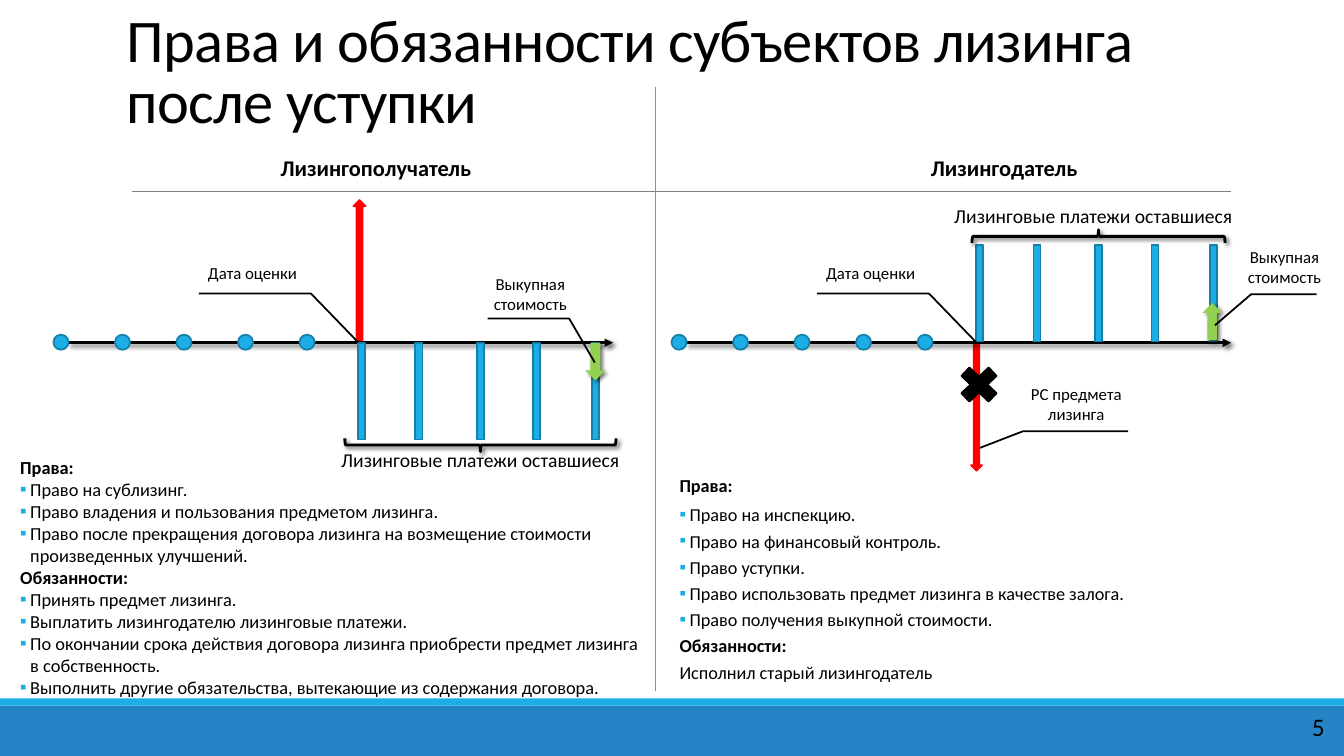
from dataclasses import dataclass
from lxml.etree import SubElement
from pptx import Presentation
from pptx.dml.color import RGBColor as RGB
from pptx.enum.shapes import MSO_CONNECTOR as Link, MSO_SHAPE as Kind
from pptx.enum.text import MSO_ANCHOR as Anchor, PP_ALIGN as Align
from pptx.oxml.ns import qn
from pptx.util import Inches, Pt


@dataclass(frozen=True)
class Theme:
    font: str = "Calibri"
    black: str = "000000"
    white: str = "FFFFFF"
    blue: str = "1CADE4"
    edge: str = "1580A9"
    foot: str = "2683C6"
    red: str = "FF0000"
    green: str = "92D050"
    grey: str = "808080"
    teal: str = "62A39F"
    title: float = 43.2
    page: float = 18
    head: float = 16
    label: float = 14
    duty: float = 13.1
    claim: float = 13
    note: float = 12
    thin: float = 1.25
    thick: float = 2


T = Theme()
AXIS = 3.4
SHIFT = 6.13
BARS = (3.55, 4.12, 4.73, 5.29, 5.87)
TENANT = (
    ("Права:", "head"),
    ("Право на сублизинг.", "item"),
    ("Право владения и пользования предметом лизинга.", "item"),
    ("Право после прекращения договора лизинга на возмещение стоимости произведенных улучшений.", "item"),
    ("Обязанности:", "head"),
    ("Принять предмет лизинга.", "item"),
    ("Выплатить лизингодателю лизинговые платежи.", "item"),
    ("По окончании срока действия договора лизинга приобрести предмет лизинга в собственность.", "item"),
    ("Выполнить другие обязательства, вытекающие из содержания договора.", "item"),
)
OWNER = (
    ("Права:", "head"),
    ("Право на инспекцию.", "item"),
    ("Право на финансовый контроль.", "item"),
    ("Право уступки.", "item"),
    ("Право использовать предмет лизинга в качестве залога.", "item"),
    ("Право получения выкупной стоимости.", "item"),
    ("Обязанности:", "head"),
    ("Исполнил старый лизингодатель", "plain"),
)


def style(para, size, bold=False):
    for run in para.runs:
        font = run.font
        font.name, font.size, font.bold = T.font, Pt(size), bold
        font.color.rgb = RGB.from_string(T.black)


def shade(props):
    effects = props.find(qn("a:effectLst"))
    glow = SubElement(effects, qn("a:outerShdw"), blurRad=str(Pt(3)),
                      dist=str(Pt(2)), dir="2700000", algn="tl", rotWithShape="0")
    color = SubElement(glow, qn("a:srgbClr"), val=T.black)
    SubElement(color, qn("a:alpha"), val="60000")


def shape(slide, kind, box, fill=None, line=None, width=T.thin, turn=0, shadow=False):
    item = slide.shapes.add_shape(kind, *map(Inches, box))
    item.shadow.inherit = False
    item.rotation = turn
    if fill:
        item.fill.solid()
        item.fill.fore_color.rgb = RGB.from_string(fill)
    else:
        item.fill.background()
    if line:
        item.line.color.rgb = RGB.from_string(line)
        item.line.width = Pt(width)
    else:
        item.line.fill.background()
    if shadow:
        shade(item._element.spPr)
    return item


def rule(slide, start, end, color, width, arrow=False):
    item = slide.shapes.add_connector(Link.STRAIGHT, *map(Inches, start + end))
    item.line.color.rgb = RGB.from_string(color)
    item.line.width = Pt(width)
    props = item._element.spPr
    SubElement(props, qn("a:effectLst"))
    if arrow:
        SubElement(props.find(qn("a:ln")), qn("a:tailEnd"), type="triangle")
        shade(props)


def text(slide, box, words, size, bold=False, align=Align.CENTER):
    frame = slide.shapes.add_textbox(*map(Inches, box)).text_frame
    frame.word_wrap = True
    frame.text = words
    para = frame.paragraphs[0]
    para.alignment = align
    style(para, size, bold)
    return frame


def bullet(para):
    props = para._p.get_or_add_pPr()
    props.set("marL", str(Inches(0.1)))
    props.set("indent", str(-Inches(0.1)))
    color = SubElement(props, qn("a:buClr"))
    SubElement(color, qn("a:srgbClr"), val=T.blue)
    SubElement(props, qn("a:buFont"), typeface=T.font)
    SubElement(props, qn("a:buChar"), char="▪")


def rights(slide, box, rows, size, pitch=None):
    frame = slide.shapes.add_textbox(*map(Inches, box)).text_frame
    frame.word_wrap = True
    frame.margin_left = frame.margin_right = 0
    frame.text = "\n".join(words for words, _ in rows)
    for para, (_, role) in zip(frame.paragraphs, rows):
        if pitch:
            para.line_spacing = pitch
        if role == "item":
            bullet(para)
        style(para, size, role == "head")
    return frame


def callout(slide, box, words, bends):
    item = shape(slide, Kind.LINE_CALLOUT_2_NO_BORDER, box, T.white, T.black)
    for i, bend in enumerate(bends):
        item.adjustments[i] = bend
    frame = item.text_frame
    frame.word_wrap = True
    frame.vertical_anchor = Anchor.MIDDLE
    frame.text = words
    para = frame.paragraphs[0]
    para.alignment = Align.CENTER
    style(para, T.note)


def flow(slide, left, top):
    rule(slide, (left + 0.68, AXIS), (left + 6.08, AXIS), T.black, T.thick, True)
    for i in range(5):
        shape(slide, Kind.OVAL, (left + 0.53 + i * 0.61, 3.32, 0.15, 0.15), T.blue, T.edge)
    for x in BARS:
        shape(slide, Kind.RECTANGLE, (left + x, top, 0.07, 0.96), T.blue, T.edge)
    callout(slide, (left + 1.7, 2.37, 1.61, 0.67), "Дата оценки",
            (0.81, 0.17, 0.81, 0.86, 1.53, 1.15))


def arrow(slide, box, color, turn, line=None, shadow=False):
    shape(slide, Kind.RIGHT_ARROW, box, color, line, turn=turn, shadow=shadow)


def brace(slide, box, turn, spot):
    shape(slide, Kind.RIGHT_BRACE, box, None, T.black, T.thick, turn, True)
    text(slide, spot + (3.25, 0.34), "Лизинговые платежи оставшиеся", T.label)


def frame(slide):
    shape(slide, Kind.RECTANGLE, (0, 7, 13.33, 0.5), T.foot)
    shape(slide, Kind.RECTANGLE, (0, 6.93, 13.33, 0.07), T.blue)
    rule(slide, (1.31, 1.9), (12.21, 1.9), T.grey, 0.5)
    title = text(slide, (1.16, 0.72, 11, 0.68),
                 "Права и обязанности субъектов лизинга после уступки", T.title, align=Align.LEFT)
    title.vertical_anchor = Anchor.BOTTOM
    title.paragraphs[0].line_spacing = 0.85
    title.paragraphs[0].runs[0]._r.get_or_add_rPr().set("spc", "-50")
    text(slide, (12.81, 7.01, 0.53, 0.4), "5", T.page)
    text(slide, (2.23, 1.48, 3, 0.37), "Лизингополучатель", T.head, True)
    text(slide, (8.46, 1.48, 3, 0.37), "Лизингодатель", T.head, True)


def tenant(slide):
    rights(slide, (0.2, 4.48, 6.19, 2.89), TENANT, T.duty)
    arrow(slide, (2.87, 2.62, 1.39, 0.12), T.red, 270, T.red)
    flow(slide, 0, AXIS)
    arrow(slide, (5.72, 3.49, 0.37, 0.2), T.green, 90, shadow=True)
    brace(slide, (4.7, 3.07, 0.13, 2.69), 90, (3.14, 4.39))
    callout(slide, (4.79, 2.67, 0.94, 0.49), "Выкупная стоимость", (1, 0.05, 1, 0.91, 1.89, 1.18))


def owner(slide):
    body = rights(slide, (6.74, 4.68, 6.27, 2.32), OWNER, T.claim, 1.2)
    first = body.paragraphs[0]
    first.line_spacing, first.space_before, first.space_after = 0.9, Pt(12), Pt(2)
    callout(slide, (9.87, 3.67, 1.61, 0.67), "РС предмета лизинга",
            (1.16, -0.1, 0.91, 0.17, 0.91, 0.82))
    arrow(slide, (9.05, 3.98, 1.27, 0.11), T.red, 90, T.red)
    flow(slide, SHIFT, 2.43)
    arrow(slide, (11.84, 3.09, 0.37, 0.2), T.green, 270, shadow=True)
    callout(slide, (12.24, 2.31, 1, 0.67), "Выкупная стоимость",
            (1.37, -0.19, 0.91, 0.17, 0.91, 0.82))
    brace(slide, (10.83, 1.09, 0.13, 2.51), 270, (9.22, 1.97))
    shape(slide, Kind.MATH_MULTIPLY, (9.45, 3.57, 0.52, 0.49), T.black, T.black)


def main():
    deck = Presentation()
    deck.slide_width, deck.slide_height = Inches(13.33), Inches(7.5)
    slide = deck.slides.add_slide(deck.slide_layouts[6])
    frame(slide)
    tenant(slide)
    owner(slide)
    rule(slide, (6.5, 0.86), (6.5, 6.86), T.teal, 1)
    deck.save("out.pptx")


if __name__ == "__main__":
    main()
